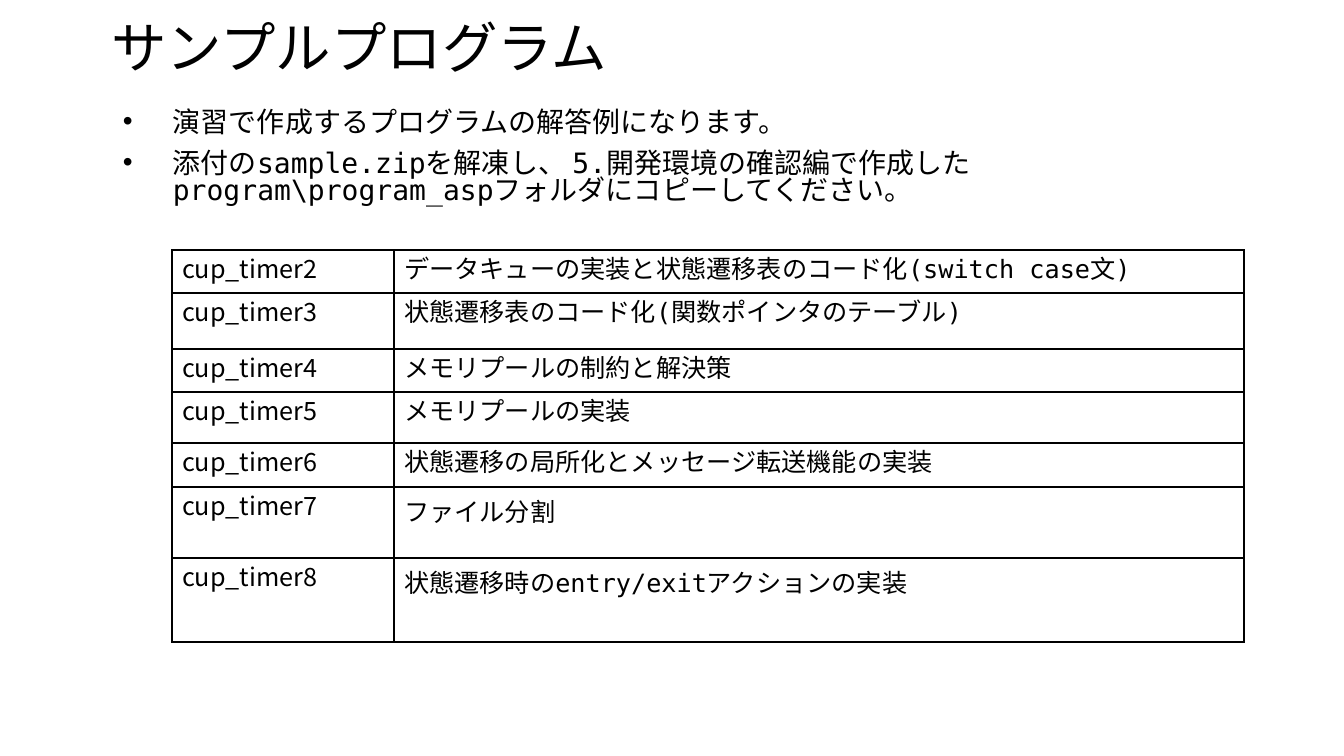
import pptx
import pptx.util
import pptx.dml.color
import pptx.enum.text
import pptx.oxml
import pptx.oxml.ns
from lxml import etree

PX = 914400 / 100.8
COLORS = {"ink": "000000"}
MONO = "DejaVu Sans Mono"
SANS = "Noto Sans CJK JP"

BULLETS = [
    "演習で作成するプログラムの解答例になります。",
    "添付のsample.zipを解凍し、 5.開発環境の確認編で作成した"
    "program\\program_aspフォルダにコピーしてください。",
]
COLUMN_WIDTHS = [222, 850]
# Program, description, row height in px, line spacing of the description
PROGRAMS = [
    ("cup_timer2", "データキューの実装と状態遷移表のコード化(switch case文)", 43, 0.8),
    ("cup_timer3", "状態遷移表のコード化(関数ポインタのテーブル)", 56, 0.8),
    ("cup_timer4", "メモリプールの制約と解決策", 43, 0.8),
    ("cup_timer5", "メモリプールの実装", 51, 0.8),
    ("cup_timer6", "状態遷移の局所化とメッセージ転送機能の実装", 44, 0.8),
    ("cup_timer7", "ファイル分割", 71, 1.0),
    ("cup_timer8", "状態遷移時のentry/exitアクションの実装", 84, 1.0),
]


def px(length):
    return pptx.util.Emu(round(length * PX))


def add_child(parent, tag, **attributes):
    return etree.SubElement(parent, pptx.oxml.ns.qn(tag), **attributes)


def format_paragraph(paragraph, size, font_name, line_spacing, space_before=0):
    paragraph.alignment = pptx.enum.text.PP_ALIGN.LEFT
    paragraph.line_spacing = line_spacing
    paragraph.space_before = pptx.util.Pt(space_before)
    font = paragraph.font
    font.size = pptx.util.Pt(size)
    font.name = font_name
    font.color.rgb = pptx.dml.color.RGBColor.from_string(COLORS["ink"])


def add_title(slide, text):
    title = slide.shapes.title
    title.left, title.top, title.width, title.height = map(px, (101, 26, 1142, 50))
    title.text_frame.text = text
    title.text_frame.auto_size = pptx.enum.text.MSO_AUTO_SIZE.NONE
    title.text_frame.vertical_anchor = pptx.enum.text.MSO_ANCHOR.MIDDLE
    format_paragraph(title.text_frame.paragraphs[0], 39.6, MONO, 0.9)


def add_bullets(slide, texts):
    box = slide.shapes.add_textbox(*map(px, (113, 106, 1130, 115)))
    frame = box.text_frame
    frame.word_wrap = True
    frame.text = "\n".join(texts)
    indent = px(50)
    for paragraph in frame.paragraphs:
        properties = paragraph._p.get_or_add_pPr()
        properties.set("marL", str(indent))
        properties.set("indent", str(-indent))
        add_child(properties, "a:buFont", typeface="Arial")
        add_child(properties, "a:buChar", char="•")
        format_paragraph(paragraph, 20, MONO, 0.8, 10)


def set_borders(cell):
    properties = cell._tc.get_or_add_tcPr()
    for position, side in enumerate(("a:lnL", "a:lnR", "a:lnT", "a:lnB")):
        line = add_child(properties, side, w=str(pptx.util.Pt(1)))
        fill = add_child(line, "a:solidFill")
        add_child(fill, "a:srgbClr", val=COLORS["ink"])
        properties.insert(position, line)


def fill_cell(cell, text, font_name, line_spacing):
    cell.text = text
    cell.fill.background()
    set_borders(cell)
    format_paragraph(cell.text_frame.paragraphs[0], 18, font_name, line_spacing, 3.6)


def add_program_table(slide):
    height = sum(program[2] for program in PROGRAMS)
    table = slide.shapes.add_table(
        len(PROGRAMS), len(COLUMN_WIDTHS),
        *map(px, (172, 250, sum(COLUMN_WIDTHS), height))).table
    table.first_row = table.horz_banding = False
    for column, width in zip(table.columns, COLUMN_WIDTHS):
        column.width = px(width)
    for row, (name, description, row_height, spacing) in zip(table.rows, PROGRAMS):
        row.height = px(row_height)
        fill_cell(row.cells[0], name, SANS, 0.8)
        fill_cell(row.cells[1], description, MONO, spacing)


def main():
    presentation = pptx.Presentation()
    presentation.slide_width = px(1344)
    presentation.slide_height = px(756)
    slide = presentation.slides.add_slide(presentation.slide_layouts[5])
    add_title(slide, "サンプルプログラム")
    add_bullets(slide, BULLETS)
    add_program_table(slide)
    presentation.save("out.pptx")


if __name__ == "__main__":
    main()
